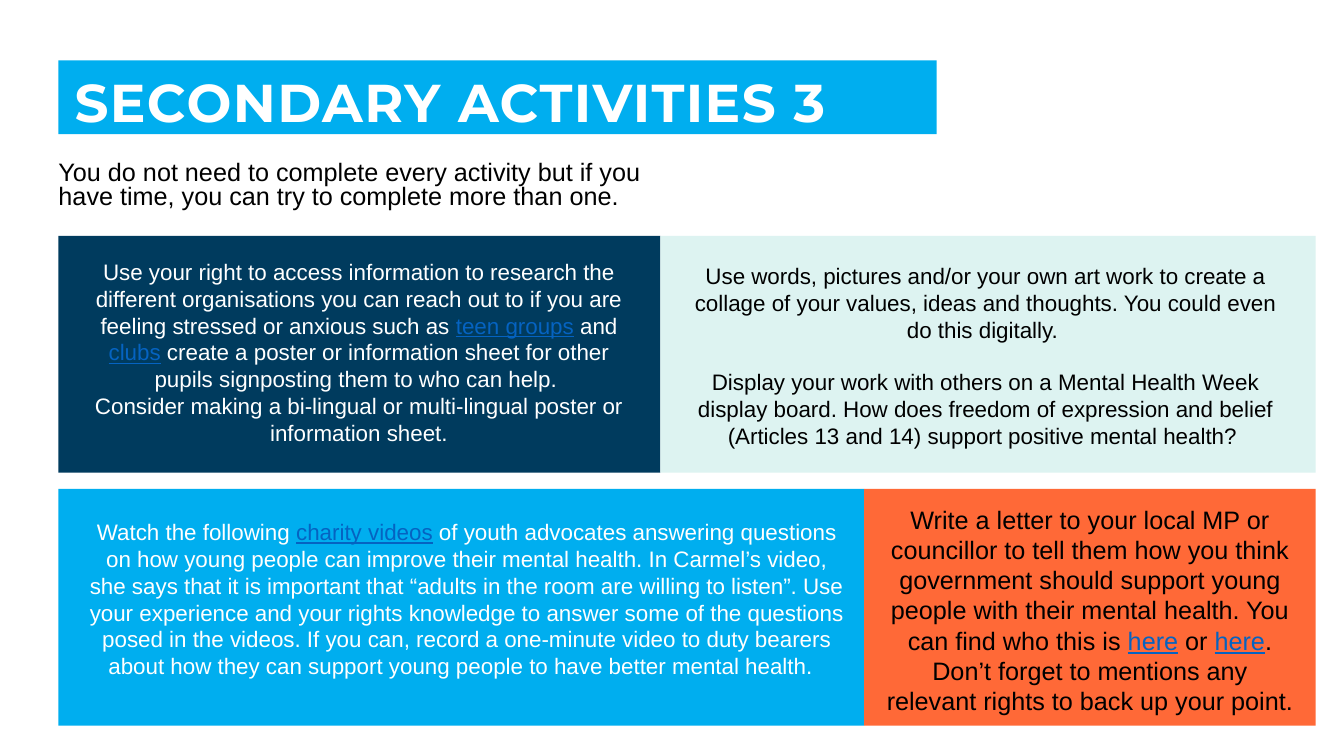
from pptx import Presentation
from pptx.dml.color import RGBColor
from pptx.enum.shapes import MSO_SHAPE as Shape
from pptx.enum.text import MSO_ANCHOR as Anchor, MSO_AUTO_SIZE as AutoSize, PP_ALIGN as Align
from pptx.util import Inches, Pt
from lxml.etree import SubElement
from pptx.oxml.ns import qn

COLORS = {
    "sky": "00AEEF", "navy": "003B5E", "mint": "DDF3F1", "orange": "FF6937",
    "white": "FFFFFF", "black": "000000", "link": "0563C1",
}
TITLE = "SECONDARY ACTIVITIES 3"
INTRO = ("You do not need to complete every activity but if you have time, "
         "you can try to complete more than one.")

RESEARCH = [
    ["Use your right to access information to research the different organisations you can "
     "reach out to if you are feeling stressed or anxious such as ",
     ("teen groups",), " and ", ("clubs",),
     " create a poster or information sheet for other pupils signposting them to who can help. "],
    ["Consider making a bi-lingual or multi-lingual poster or information sheet."],
]
COLLAGE = [
    ["Use words, pictures and/or your own art work to create a collage of your values, ideas "
     "and thoughts. You could even do this digitally. "],
    ["Display your work with others on a Mental Health Week display board. How does freedom of "
     "expression and belief (Articles 13 and 14) support positive mental health? "],
]
VIDEOS = [
    ["Watch the following ", ("charity videos",),
     " of youth advocates answering questions on how young people can improve their mental "
     "health. In Carmel’s video, she says that it is important that “adults in the room are "
     "willing to listen”. Use your experience and your rights knowledge to answer some of the "
     "questions posed in the videos. If you can, record a one-minute video to duty bearers about "
     "how they can support young people to have better mental health.  "],
]
LETTER = [
    ["Write a letter to your local MP or councillor to tell them how you think government should "
     "support young people with their mental health. You can find who this is ",
     ("here",), " or ", ("here",),
     ". Don’t forget to mentions any relevant rights to back up your point."],
]

LEFT, RIGHT = 0.58, 13.05
GRID_TOP, ROW_HEIGHT, ROW_GAP = 2.34, 2.35, 0.16
ROWS = [
    (6.55, [
        dict(fill="navy", color="white", size=16, gap=0, content=RESEARCH,
             margins=(0.12, 0.17, 0.13, 0.19)),
        dict(fill="mint", color="black", size=16, gap=18.4, content=COLLAGE,
             margins=(0.24, 0.21, 0.29, 0.15)),
    ]),
    (8.57, [
        dict(fill="sky", color="white", size=16, gap=0, content=VIDEOS,
             margins=(0.18, 0.24, 0.07, 0.39)),
        dict(fill="orange", color="black", size=18, gap=0, content=LETTER,
             margins=(0.12, 0.1, 0.12, 0.03)),
    ]),
]


def rgb(name):
    return RGBColor.from_string(COLORS[name])


def place(shape, left, top, width, height):
    shape.left, shape.top = Inches(left), Inches(top)
    shape.width, shape.height = Inches(width), Inches(height)


def write(frame, content, size, color, font="Arial", bold=False, align=Align.CENTER,
          line=1.0, gap=0, tracking=0, insets=(0.1, 0.05, 0.1, 0.05), anchor=Anchor.TOP):
    frame.word_wrap = True
    frame.auto_size = AutoSize.NONE
    frame.vertical_anchor = anchor
    (frame.margin_left, frame.margin_top,
     frame.margin_right, frame.margin_bottom) = map(Inches, insets)
    for index, pieces in enumerate(content):
        para = frame.add_paragraph() if index else frame.paragraphs[0]
        para.alignment = align
        para.line_spacing = line
        para.space_before = Pt(gap if index else 0)
        for piece in pieces:
            linked = isinstance(piece, tuple)
            span = para.add_run()
            span.text = piece[0] if linked else piece
            span.font.name = font
            span.font.size = Pt(size)
            span.font.bold = bold
            span.font.underline = linked
            span.font.color.rgb = rgb("link" if linked else color)
            if tracking:
                span.font._element.set("spc", str(tracking * 100))


def add_tile(page, left, top, width, tile):
    panel = page.shapes.add_shape(Shape.RECTANGLE, Inches(left), Inches(top),
                                  Inches(width), Inches(ROW_HEIGHT))
    panel.shadow.inherit = False
    panel.fill.solid()
    panel.fill.fore_color.rgb = rgb(tile["fill"])
    panel.line.fill.background()
    west, north, east, south = tile["margins"]
    box = page.shapes.add_textbox(Inches(left + west), Inches(top + north),
                                  Inches(width - west - east),
                                  Inches(ROW_HEIGHT - north - south))
    write(box.text_frame, tile["content"], tile["size"], tile["color"], gap=tile["gap"])


def main():
    deck = Presentation()
    deck.slide_width, deck.slide_height = Inches(13.33), Inches(7.5)
    page = deck.slides.add_slide(deck.slide_layouts[1])

    title = page.shapes.title
    place(title, LEFT, 0.6, 8.71, 0.73)
    title.fill.solid()
    title.fill.fore_color.rgb = rgb("sky")
    write(title.text_frame, [[TITLE]], 38, "white", font="Montserrat", bold=True,
          align=Align.LEFT, line=0.9, tracking=1, insets=(0.16, 0.16, 0.12, 0),
          anchor=Anchor.MIDDLE)

    intro = page.placeholders[1]
    place(intro, LEFT, 1.56, 6.21, 0.62)
    write(intro.text_frame, [[INTRO]], 18, "black", align=Align.LEFT, line=0.8,
          insets=(0, 0.05, 0.1, 0.05))
    settings = intro.text_frame.paragraphs[0]._p.get_or_add_pPr()
    settings.set("marL", "0")
    settings.set("indent", "0")
    SubElement(settings, qn("a:buNone"))

    for row, (split, tiles) in enumerate(ROWS):
        top = GRID_TOP + row * (ROW_HEIGHT + ROW_GAP)
        edges = (LEFT, split, RIGHT)
        for left, right, tile in zip(edges, edges[1:], tiles):
            add_tile(page, left, top, right - left, tile)

    deck.save("out.pptx")


if __name__ == "__main__":
    main()
